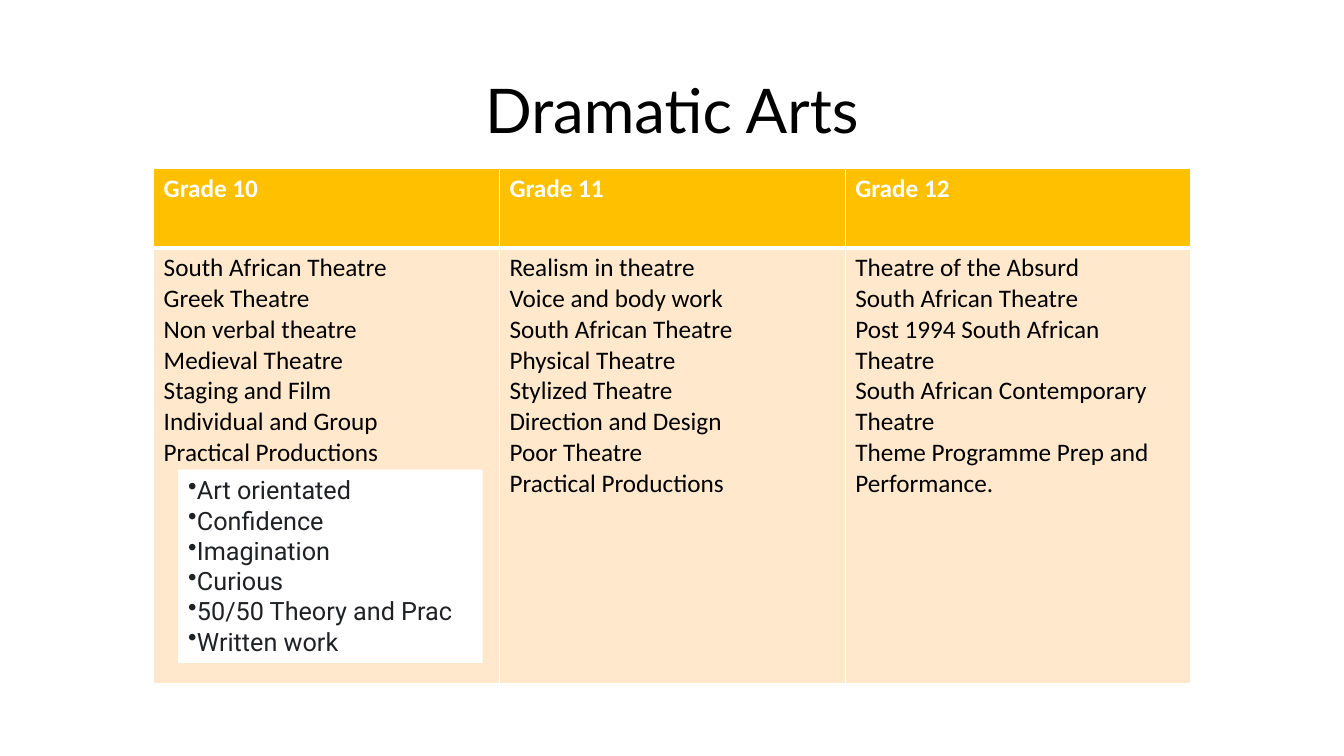
"""Builds the Dramatic Arts slide: a grade table with a list of traits."""
from lxml import etree
from pptx import Presentation
from pptx.dml.color import RGBColor
from pptx.enum.shapes import MSO_SHAPE
from pptx.enum.text import MSO_ANCHOR, PP_ALIGN
from pptx.oxml.ns import qn
from pptx.util import Pt

RECTANGLE = MSO_SHAPE.RECTANGLE
TOP, MIDDLE = MSO_ANCHOR.TOP, MSO_ANCHOR.MIDDLE
LEFT, CENTER = PP_ALIGN.LEFT, PP_ALIGN.CENTER

WHITE, BLACK, GRAY = "FFFFFF", "000000", "202124"
AMBER, CREAM = "FFC000", "FFE8CC"

GRADES = {
    "Grade 10": ["South African Theatre", "Greek Theatre", "Non verbal theatre",
                 "Medieval Theatre", "Staging and Film",
                 "Individual and Group\vPractical Productions"],
    "Grade 11": ["Realism in theatre", "Voice and body work", "South African Theatre",
                 "Physical Theatre", "Stylized Theatre", "Direction and Design",
                 "Poor Theatre", "Practical Productions"],
    "Grade 12": ["Theatre of the Absurd", "South African Theatre",
                 "Post 1994 South African Theatre",
                 "South African Contemporary Theatre",
                 "Theme Programme Prep and Performance."],
}
TRAITS = ["Art orientated", "Confidence", "Imagination", "Curious",
          "50/50 Theory and Prac", "Written work"]


def color(value):
    """Return the colour for a hex string."""
    return RGBColor.from_string(value)


def paint(fill, value):
    """Give a fill one solid colour."""
    fill.solid()
    fill.fore_color.rgb = color(value)


def add_bullet(para):
    """Put a bullet directly before the text of a paragraph."""
    properties = para._p.get_or_add_pPr()
    properties.set("marL", "0")
    properties.set("indent", "0")
    etree.SubElement(properties, qn("a:buChar"), char="•")


def write(frame, lines, font="Calibri", size=18, ink=BLACK, bold=False,
          align=LEFT, spacing=1.0, bullet=False):
    """Fill a text frame with one formatted paragraph per line."""
    frame.word_wrap = True
    for index, line in enumerate(lines):
        para = frame.add_paragraph() if index else frame.paragraphs[0]
        para.text = line
        para.alignment = align
        para.line_spacing = spacing
        if bullet:
            add_bullet(para)
        for span in para.runs:
            span.font.name = font
            span.font.size = Pt(size)
            span.font.bold = bold
            span.font.color.rgb = color(ink)


def add_title(page, text):
    """Add the centred slide title."""
    box = page.shapes.add_textbox(Pt(66), Pt(28.75), Pt(828), Pt(104.4))
    box.text_frame.vertical_anchor = MIDDLE
    write(box.text_frame, [text], font="Lato", size=44, align=CENTER, spacing=0.9)


def set_borders(cell, top, bottom):
    """Draw white cell borders with the given top and bottom widths."""
    properties = cell._tc.get_or_add_tcPr()
    widths = {"a:lnL": 1, "a:lnR": 1, "a:lnT": top, "a:lnB": bottom}
    for index, (tag, width) in enumerate(widths.items()):
        line = etree.Element(qn(tag), w=str(Pt(width)))
        fill = etree.SubElement(line, qn("a:solidFill"))
        etree.SubElement(fill, qn("a:srgbClr"), val=WHITE)
        properties.insert(index, line)


def fill_cell(cell, lines, background, top, bottom, **text_format):
    """Set the text, fill and borders of a table cell."""
    write(cell.text_frame, lines, **text_format)
    paint(cell.fill, background)
    set_borders(cell, top, bottom)


def add_grade_table(page, grades):
    """Add a table with one column of topics per grade."""
    frame = page.shapes.add_table(2, len(grades), Pt(109.75), Pt(120),
                                  Pt(741), Pt(368))
    table = frame.table
    table.rows[0].height, table.rows[1].height = Pt(57), Pt(311)
    for index, (grade, topics) in enumerate(grades.items()):
        table.columns[index].width = Pt(247)
        fill_cell(table.cell(0, index), [grade], AMBER, 1, 3, ink=WHITE, bold=True)
        fill_cell(table.cell(1, index), topics, CREAM, 3, 1)


def add_trait_box(page, traits):
    """Add the white box with the bulleted traits."""
    box = page.shapes.add_shape(RECTANGLE, Pt(127.25), Pt(335.5), Pt(217.5), Pt(138))
    box.shadow.inherit = False
    paint(box.fill, WHITE)
    box.line.fill.background()
    box.text_frame.vertical_anchor = TOP
    write(box.text_frame, traits, font="Roboto", ink=GRAY, bullet=True)


def main():
    """Build and save the deck."""
    deck = Presentation()
    deck.slide_width, deck.slide_height = Pt(960), Pt(540)
    page = deck.slides.add_slide(deck.slide_layouts[6])
    add_title(page, "Dramatic Arts")
    add_grade_table(page, GRADES)
    add_trait_box(page, TRAITS)
    deck.save("out.pptx")


if __name__ == "__main__":
    main()
